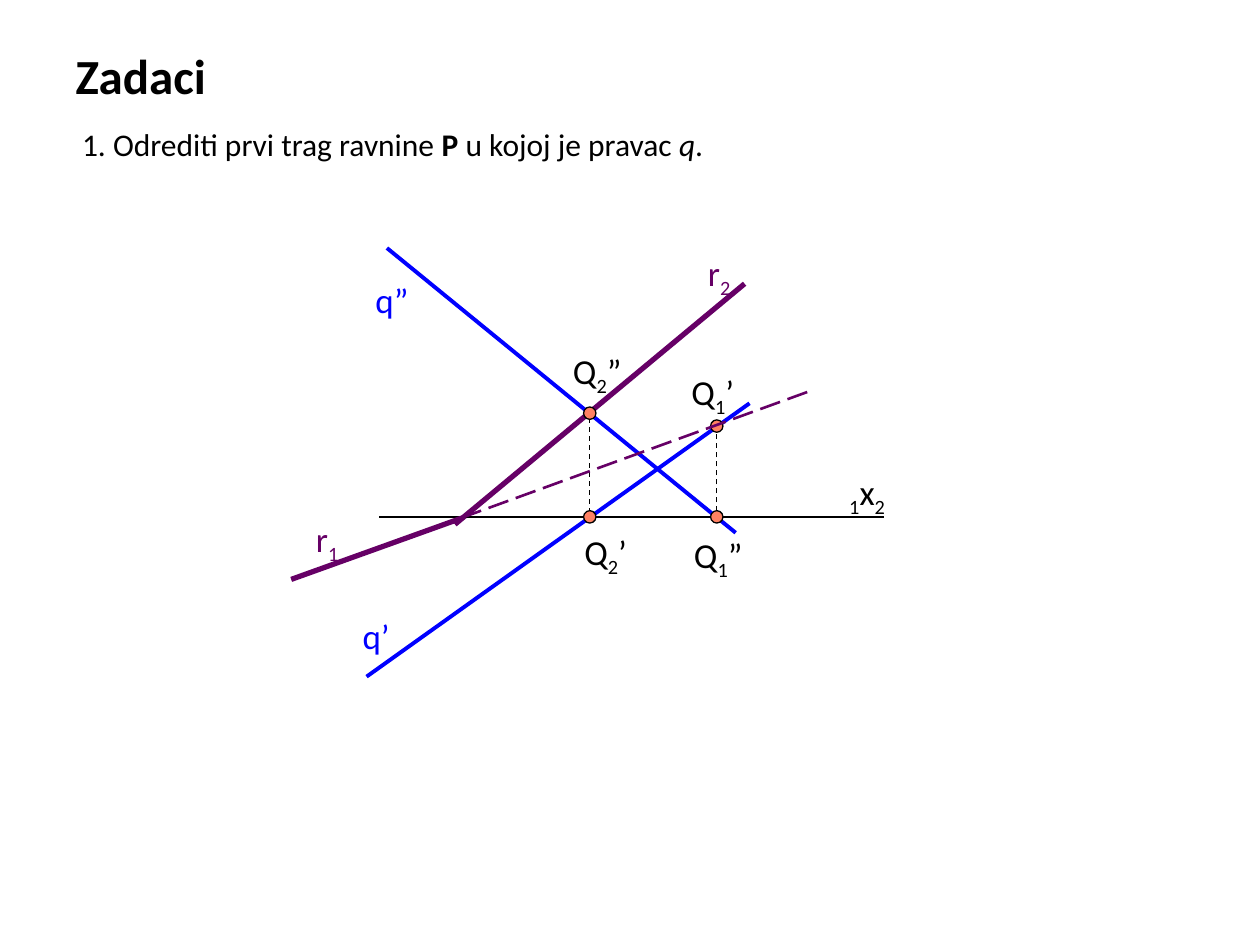
"""Build the slide on the first trace of a plane through a line."""
import dataclasses

import lxml.etree
import pptx
import pptx.dml.color
import pptx.enum.dml
import pptx.enum.shapes
import pptx.enum.text
import pptx.oxml.ns
import pptx.util

Cm = pptx.util.Cm
Dash = pptx.enum.dml.MSO_LINE
FONT = "Calibri"
HUES = {"ink": "000000", "line": "0000FF", "trace": "660066", "dot": "FF8163"}
DOT_SIZE = 0.25
LABEL_HEIGHT = 1.11


@dataclasses.dataclass
class Stroke:
    start: tuple
    end: tuple
    hue: str
    width: float
    dash: object = None


@dataclasses.dataclass
class Label:
    left: float
    top: float
    width: float
    signs: tuple
    hue: str = "ink"


Q1_X, Q2_X, AXIS_Y = 14.45, 11.89, 10.42

BACK = [
    Stroke((9.17, 10.57), (15.01, 5.72), "trace", 3),
    Stroke((7.65, AXIS_Y), (17.83, AXIS_Y), "ink", 0.75),
    Stroke((7.8, 5), (14.83, 10.74), "line", 2.25),
    Stroke((7.39, 13.64), (15.11, 8.13), "line", 2.25),
    Stroke((Q2_X, 10.34), (Q2_X, 8.43), "ink", 0.75, Dash.DASH),
    Stroke((Q1_X, 10.31), (Q1_X, 8.61), "ink", 0.75, Dash.DASH),
]
DOTS = [(Q2_X, AXIS_Y), (Q2_X, 8.33), (Q1_X, AXIS_Y), (Q1_X, 8.59)]
FRONT = [
    Stroke((9.3, 10.44), (16.28, 7.9), "trace", 1.5, Dash.LONG_DASH),
    Stroke((5.87, 11.68), (9.32, 10.44), "trace", 3),
]
LABELS = [
    Label(16.87, 9.37, 1.3, ("1", "x", "2")),
    Label(7.06, 12.27, 1.73, ("q’",), "line"),
    Label(7.32, 5.49, 1.93, ("q”",), "line"),
    Label(11.53, 10.57, 1.55, ("Q", "2", "’")),
    Label(11.3, 6.93, 1.68, ("Q", "2", "”")),
    Label(14.02, 4.95, 1.07, ("r", "2"), "trace"),
    Label(13.74, 10.64, 2.34, ("Q", "1", "”")),
    Label(13.69, 7.34, 1.57, ("Q", "1", "’")),
    Label(6.12, 10.31, 1.02, ("r", "1"), "trace"),
]


def shade(name: str) -> pptx.dml.color.RGBColor:
    return pptx.dml.color.RGBColor.from_string(HUES[name])


def style(run, size: float, hue: str = "ink") -> None:
    run.font.name = FONT
    run.font.size = pptx.util.Pt(size)
    run.font.color.rgb = shade(hue)


def draw_stroke(shapes, stroke: Stroke) -> None:
    kind = pptx.enum.shapes.MSO_CONNECTOR.STRAIGHT
    line = shapes.add_connector(kind, *map(Cm, stroke.start + stroke.end))
    line.line.color.rgb = shade(stroke.hue)
    line.line.width = pptx.util.Pt(stroke.width)
    if stroke.dash is not None:
        line.line.dash_style = stroke.dash
    props = line._element.spPr
    lxml.etree.SubElement(props, pptx.oxml.ns.qn("a:effectLst"))


def draw_dot(shapes, x: float, y: float) -> None:
    half = DOT_SIZE / 2
    kind = pptx.enum.shapes.MSO_SHAPE.OVAL
    dot = shapes.add_shape(kind, Cm(x - half), Cm(y - half), Cm(DOT_SIZE), Cm(DOT_SIZE))
    dot.shadow.inherit = False
    dot.fill.solid()
    dot.fill.fore_color.rgb = shade("dot")
    dot.line.color.rgb = shade("ink")
    dot.line.width = pptx.util.Pt(0.75)


def draw_label(shapes, label: Label) -> None:
    box = shapes.add_textbox(Cm(label.left), Cm(label.top), Cm(label.width), Cm(LABEL_HEIGHT))
    box.text_frame.word_wrap = True
    for sign in label.signs:
        run = box.text_frame.paragraphs[0].add_run()
        run.text = sign
        style(run, 20, label.hue)
        if sign.isdigit():
            run._r.get_or_add_rPr().set("baseline", "-25000")


def place(holder, left: float, top: float, width: float, height: float):
    holder.left, holder.top = Cm(left), Cm(top)
    holder.width, holder.height = Cm(width), Cm(height)
    frame = holder.text_frame
    frame.auto_size = pptx.enum.text.MSO_AUTO_SIZE.NONE
    frame.vertical_anchor = pptx.enum.text.MSO_ANCHOR.TOP
    first = frame.paragraphs[0]
    first.alignment = pptx.enum.text.PP_ALIGN.LEFT
    first.space_before = pptx.util.Pt(0)
    return first


def fill_title(holder) -> None:
    holder.text_frame.text = "Zadaci"
    run = place(holder, 1.27, 0.79, 4.45, 1.45).runs[0]
    style(run, 28)
    run.font.bold = True


def fill_task(holder) -> None:
    task = place(holder, 1.4, 2.39, 20.52, 1.02)
    props = task._p.get_or_add_pPr()
    props.set("marL", "0")
    props.set("indent", "0")
    lxml.etree.SubElement(props, pptx.oxml.ns.qn("a:buNone"))
    for piece in ("1. Odrediti prvi trag ravnine ", "P", " u kojoj je pravac ", "q", "."):
        run = task.add_run()
        run.text = piece
        style(run, 18)
        run.font.bold = piece == "P"
        run.font.italic = piece == "q"


def main() -> None:
    deck = pptx.Presentation()
    deck.slide_width, deck.slide_height = Cm(25.4), Cm(19.05)
    slide = deck.slides.add_slide(deck.slide_layouts[1])
    fill_title(slide.shapes.title)
    fill_task(slide.placeholders[1])
    for stroke in BACK:
        draw_stroke(slide.shapes, stroke)
    for x, y in DOTS:
        draw_dot(slide.shapes, x, y)
    for stroke in FRONT:
        draw_stroke(slide.shapes, stroke)
    for label in LABELS:
        draw_label(slide.shapes, label)
    deck.save("out.pptx")


if __name__ == "__main__":
    main()
